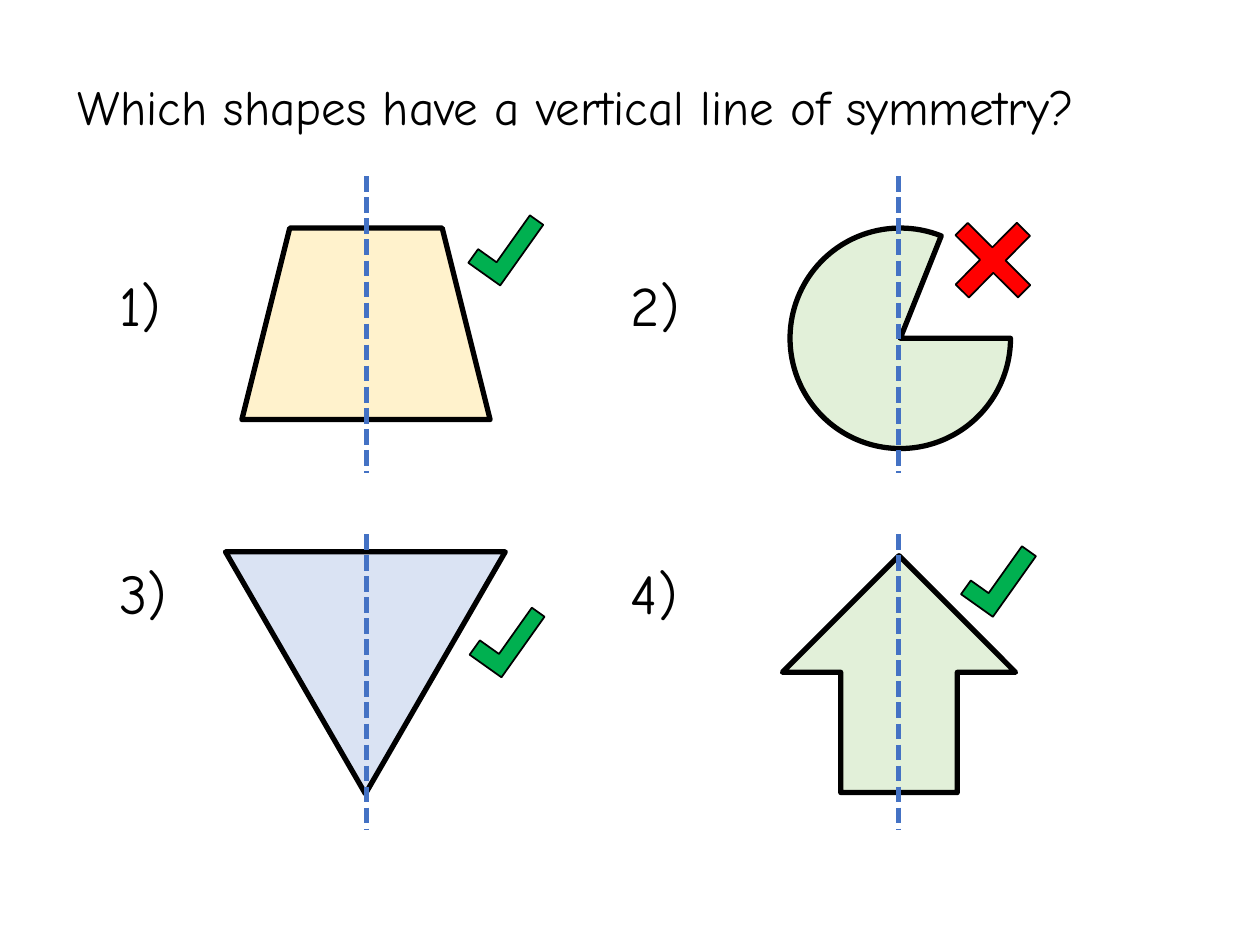
from pptx import Presentation
from pptx.dml.color import RGBColor
from pptx.enum.dml import MSO_LINE
from pptx.enum.shapes import MSO_CONNECTOR, MSO_SHAPE
from pptx.enum.text import MSO_ANCHOR, MSO_AUTO_SIZE, PP_ALIGN
from pptx.oxml.ns import qn
from pptx.util import Inches, Pt
from lxml import etree

STRAIGHT = MSO_CONNECTOR.STRAIGHT
DASH = MSO_LINE.SQUARE_DOT
TRAPEZOID = MSO_SHAPE.TRAPEZOID
PIE = MSO_SHAPE.PIE
TRIANGLE = MSO_SHAPE.ISOSCELES_TRIANGLE
ARROW = MSO_SHAPE.DOWN_ARROW
CORNER = MSO_SHAPE.CORNER
CROSS = MSO_SHAPE.CROSS
TOP = MSO_ANCHOR.TOP
NO_FIT = MSO_AUTO_SIZE.NONE
LEFT, CENTER = PP_ALIGN.LEFT, PP_ALIGN.CENTER

BLACK, GREEN, RED, BLUE = "000000", "00B050", "FF0000", "4472C4"
CREAM, MINT, SKY = "FFF2CC", "E2F0D9", "DAE3F3"


def color(value):
    return RGBColor.from_string(value)


def write(box, text, size, align=LEFT, wrap=True, font="Comic Neue", fill=BLACK):
    frame = box.text_frame
    frame.word_wrap = wrap
    frame.auto_size = NO_FIT
    frame.vertical_anchor = TOP
    para = frame.paragraphs[0]
    para.alignment = align
    para.line_spacing = 1.0
    span = para.add_run()
    span.text = text
    span.font.name = font
    span.font.size = Pt(size)
    span.font.color.rgb = color(fill)


class Worksheet:
    """Holds the current slide and the style of its parts."""

    outline, mark_outline = 3, 1
    title_size, label_size = 28, 32
    mark_width, mark_height, mark_turn = 0.31, 0.59, 35.4

    def __init__(self, page):
        self.page = page

    def title(self, text, left, top, width, height):
        box = self.page.shapes.title
        box.left, box.top = Inches(left), Inches(top)
        box.width, box.height = Inches(width), Inches(height)
        write(box, text, self.title_size, align=CENTER)

    def label(self, text, left, top):
        box = self.page.shapes.add_textbox(
            Inches(left), Inches(top), Inches(0.64), Inches(0.64))
        write(box, text, self.label_size, wrap=False)

    def figure(self, kind, left, top, width, height, fill,
               turn=0, adjust=(), weight=outline):
        shape = self.page.shapes.add_shape(
            kind, Inches(left), Inches(top), Inches(width), Inches(height))
        shape.shadow.inherit = False
        shape.rotation = turn
        shape.fill.solid()
        shape.fill.fore_color.rgb = color(fill)
        shape.line.color.rgb = color(BLACK)
        shape.line.width = Pt(weight)
        for index, value in enumerate(adjust):
            shape.adjustments[index] = value
        return shape

    def axis(self, x, top, bottom):
        line = self.page.shapes.add_connector(
            STRAIGHT, Inches(x), Inches(top), Inches(x), Inches(bottom))
        line.line.color.rgb = color(BLUE)
        line.line.width = Pt(self.outline)
        line.line.dash_style = DASH
        etree.SubElement(line._element.spPr, qn("a:effectLst"))

    def tick(self, left, top, adjust):
        shape = self.figure(CORNER, left, top, self.mark_width, self.mark_height,
                            GREEN, self.mark_turn, adjust, self.mark_outline)
        shape._element.spPr.get_or_add_xfrm().set("flipH", "1")

    def cross(self, left, top):
        self.figure(CROSS, left, top, 0.7, 0.69, RED, 44.8, (0.4,),
                    self.mark_outline)


def main():
    deck = Presentation()
    deck.slide_width, deck.slide_height = Inches(10), Inches(7.5)
    sheet = Worksheet(deck.slides.add_slide(deck.slide_layouts[5]))

    sheet.title("Which shapes have a vertical line of symmetry?",
                0.5, 0.56, 8.14, 1.04)

    # Question numbers, two by two
    for index in range(4):
        row, column = divmod(index, 2)
        sheet.label(f"{index + 1})", 0.85 + 4.06 * column, 2.1 + 2.28 * row)

    # Shapes to judge; pie angles count in units of 100000/60000 degrees
    sheet.figure(TRAPEZOID, 1.92, 1.81, 1.97, 1.52, CREAM)
    sheet.figure(PIE, 6.27, 1.81, 1.75, 1.75, MINT, adjust=(0, 291.8 * 0.6))
    sheet.figure(TRIANGLE, 1.79, 4.38, 2.22, 1.92, SKY, turn=180)
    sheet.figure(ARROW, 6.21, 4.41, 1.85, 1.88, MINT, turn=180)

    # Vertical dashed lines
    for top, bottom in ((1.4, 3.75), (4.24, 6.58)):
        for x in (2.91, 7.13):
            sheet.axis(x, top, bottom)

    # Answers
    sheet.tick(3.86, 1.64, (0.43, 0.42))
    sheet.tick(3.87, 4.75, (0.45, 0.4))
    sheet.tick(7.77, 4.27, (0.43, 0.44))
    sheet.cross(7.53, 1.72)

    deck.save("out.pptx")


if __name__ == "__main__":
    main()
